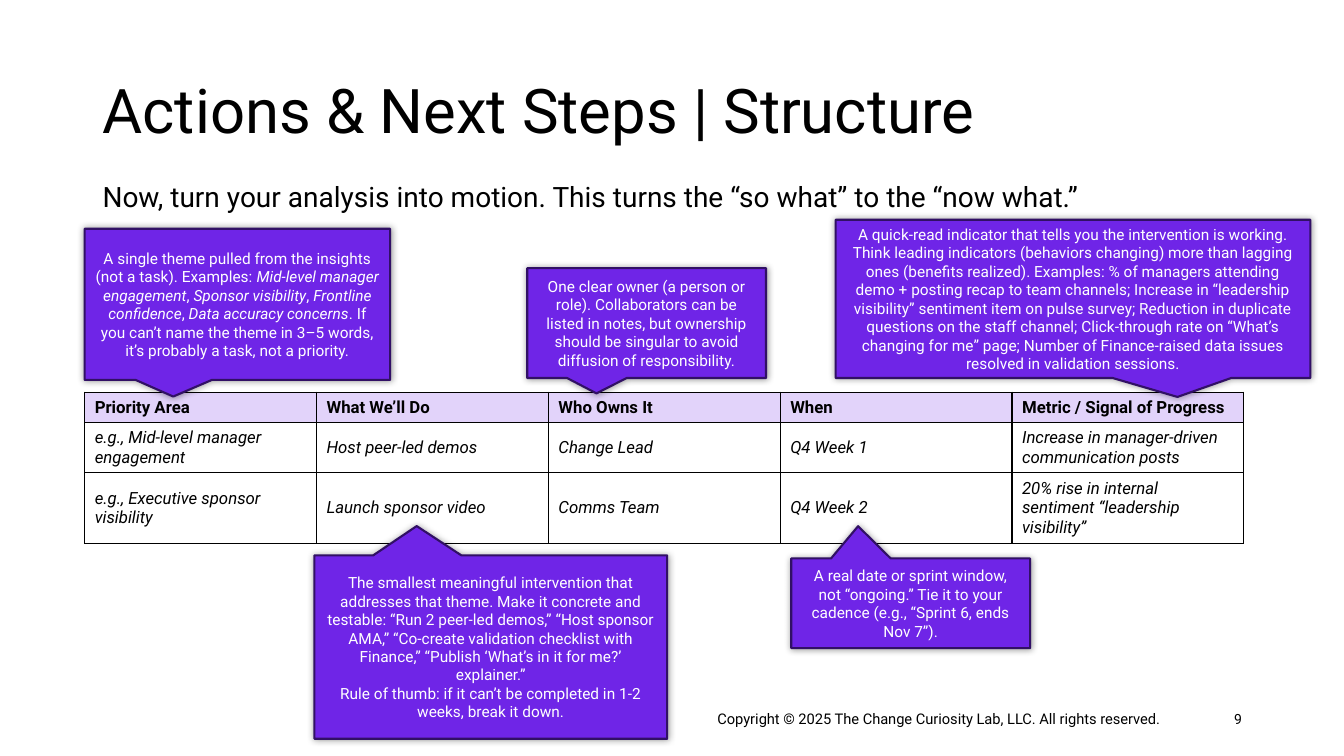
from lxml import etree
from pptx import Presentation
from pptx.dml.color import RGBColor
from pptx.enum.shapes import MSO_SHAPE
from pptx.enum.text import MSO_ANCHOR, PP_ALIGN
from pptx.oxml import parse_xml
from pptx.oxml.ns import nsdecls, qn
from pptx.util import Pt

CALLOUT = MSO_SHAPE.RECTANGULAR_CALLOUT
TOP, MIDDLE = MSO_ANCHOR.TOP, MSO_ANCHOR.MIDDLE
LEFT, CENTER, RIGHT = PP_ALIGN.LEFT, PP_ALIGN.CENTER, PP_ALIGN.RIGHT

FONT = "Roboto"
COLORS = {
    "text": "000000",
    "header": "E2D3FA",
    "callout": "6F25E7",
    "callout_line": "311065",
    "callout_text": "FFFFFF",
    "border": "000000",
    "shadow": "000000",
}

TABLE_BOX = (60.5, 280.1, 828, 105.7)
ROW_HEIGHTS = (21.4, 35, 49.3)
TABLE_ROWS = [
    ["Priority Area", "What We’ll Do", "Who Owns It", "When", "Metric / Signal of Progress"],
    ["e.g., Mid-level manager engagement", "Host peer-led demos", "Change Lead", "Q4 Week 1",
     "Increase in manager-driven communication posts"],
    ["e.g., Executive sponsor visibility", "Launch sponsor video", "Comms Team", "Q4 Week 2",
     "20% rise in internal sentiment “leadership visibility”"],
]

# Box, pointer tip relative to the box centre, paragraphs (*...* is italic)
CALLOUTS = [
    ((60.5, 163.4, 218.2, 108), (-0.21, 0.61), [
        "A single theme pulled from the insights (not a task). Examples: "
        "*Mid-level manager engagement*, *Sponsor visibility*, *Frontline confidence*, "
        "*Data accuracy concerns*. If you can’t name the theme in 3–5 words, "
        "it’s probably a task, not a priority."]),
    ((224.6, 396.7, 252, 131), (-0.21, -0.66), [
        "The smallest meaningful intervention that addresses that theme. Make it concrete "
        "and testable: “Run 2 peer-led demos,” “Host sponsor AMA,” “Co-create validation "
        "checklist with Finance,” “Publish ‘What’s in it for me?’ explainer.”",
        "Rule of thumb: if it can’t be completed in 1-2 weeks, break it down."]),
    ((376.6, 191.5, 170.6, 78.5), (-0.21, 0.64), [
        "One clear owner (a person or role). Collaborators can be listed in notes, but "
        "ownership should be singular to avoid diffusion of responsibility."]),
    ((596.9, 157, 339.1, 113), (0.22, 0.62), [
        "A quick-read indicator that tells you the intervention is working. Think leading "
        "indicators (behaviors changing) more than lagging ones (benefits realized). "
        "Examples: % of managers attending demo + posting recap to team channels; Increase "
        "in “leadership visibility” sentiment item on pulse survey; Reduction in duplicate "
        "questions on the staff channel; Click-through rate on “What’s changing for me” "
        "page; Number of Finance-raised data issues resolved in validation sessions."]),
    ((565.2, 398.9, 170.6, 64.1), (-0.22, -0.86), [
        "A real date or sprint window, not “ongoing.” Tie it to your cadence "
        "(e.g., “Sprint 6, ends Nov 7”)."]),
]


def rgb(name):
    return RGBColor.from_string(COLORS[name])


def points(box):
    return [Pt(value) for value in box]


def style_font(font, size, color="text", bold=False, italic=False):
    font.name = FONT
    font.size = Pt(size)
    font.color.rgb = rgb(color)
    font.bold = bold
    font.italic = italic


def add_text(slide, box, text, size, anchor=TOP, align=LEFT):
    frame = slide.shapes.add_textbox(*points(box)).text_frame
    frame.word_wrap = True
    frame.vertical_anchor = anchor
    frame.text = text
    paragraph = frame.paragraphs[0]
    paragraph.alignment = align
    style_font(paragraph.runs[0].font, size)
    return paragraph


def add_heading(slide, box):
    """Place the title at the top of the box and the lead sentence below it."""
    left, top, width, height = box
    title = add_text(slide, (left, top, width, 104.4),
                     "Actions & Next Steps | Structure", 44, MIDDLE)
    title.line_spacing = 0.9
    lead = add_text(slide, (left, top + 91.4, width, height - 91.4),
                    "Now, turn your analysis into motion. "
                    "This turns the “so what” to the “now what.”", 20)
    lead.line_spacing = 1.2
    lead.space_after = Pt(6)


def add_borders(cell):
    properties = cell._tc.get_or_add_tcPr()
    for position, side in enumerate(("lnL", "lnR", "lnT", "lnB")):
        properties.insert(position, parse_xml(
            f'<a:{side} {nsdecls("a")} w="{Pt(1)}"><a:solidFill>'
            f'<a:srgbClr val="{COLORS["border"]}"/></a:solidFill></a:{side}>'))


def add_action_table(slide, box):
    table = slide.shapes.add_table(len(TABLE_ROWS), len(TABLE_ROWS[0]), *points(box)).table
    table.horz_banding = False
    for column in table.columns:
        column.width = Pt(box[2] / len(TABLE_ROWS[0]))
    for row_index, texts in enumerate(TABLE_ROWS):
        is_header = row_index == 0
        table.rows[row_index].height = Pt(ROW_HEIGHTS[row_index])
        for column_index, text in enumerate(texts):
            cell = table.cell(row_index, column_index)
            cell.text = text
            cell.vertical_anchor = MIDDLE
            if is_header:
                cell.fill.solid()
                cell.fill.fore_color.rgb = rgb("header")
            else:
                cell.fill.background()
            style_font(cell.text_frame.paragraphs[0].runs[0].font, 12,
                       bold=is_header, italic=not is_header)
            add_borders(cell)


def add_glow_shadow(shape):
    """Give the shape a soft shadow that spreads evenly on all sides."""
    shape.shadow.inherit = False
    effects = shape._element.spPr.find(qn("a:effectLst"))
    shadow = etree.SubElement(effects, qn("a:outerShdw"), blurRad=str(Pt(5)), dist="0",
                              dir="0", algn="ctr", rotWithShape="0")
    color = etree.SubElement(shadow, qn("a:srgbClr"), val=COLORS["shadow"])
    etree.SubElement(color, qn("a:alpha"), val="40000")


def add_callout(slide, box, tip, texts):
    shape = slide.shapes.add_shape(CALLOUT, *points(box))
    shape.adjustments[0], shape.adjustments[1] = tip
    shape.fill.solid()
    shape.fill.fore_color.rgb = rgb("callout")
    shape.line.color.rgb = rgb("callout_line")
    shape.line.width = Pt(1.5)
    add_glow_shadow(shape)
    frame = shape.text_frame
    frame.word_wrap = True
    frame.vertical_anchor = MIDDLE
    for index, text in enumerate(texts):
        paragraph = frame.add_paragraph() if index else frame.paragraphs[0]
        paragraph.alignment = CENTER
        for part_index, part in enumerate(text.split("*")):
            run = paragraph.add_run()
            run.text = part
            style_font(run.font, 11, "callout_text", italic=part_index % 2 == 1)


def add_footer(slide, box):
    """Place the copyright line and, at the right end, the page number."""
    left, top, width, height = box
    number_width = 45.4
    add_text(slide, (left, top + 4.3, width - number_width, 20.2),
             "Copyright © 2025 The Change Curiosity Lab, LLC. All rights reserved.", 10.5)
    add_text(slide, (left + width - number_width, top, number_width, height),
             "9", 10, MIDDLE, RIGHT)


def main():
    presentation = Presentation()
    presentation.slide_width, presentation.slide_height = Pt(960), Pt(540)
    slide = presentation.slides.add_slide(presentation.slide_layouts[6])
    add_footer(slide, (505.4, 499, 388.8, 28.8))
    add_heading(slide, (66.2, 28.8, 828, 192.9))
    add_action_table(slide, TABLE_BOX)
    for box, tip, texts in CALLOUTS:
        add_callout(slide, box, tip, texts)
    presentation.save("out.pptx")


if __name__ == "__main__":
    main()
